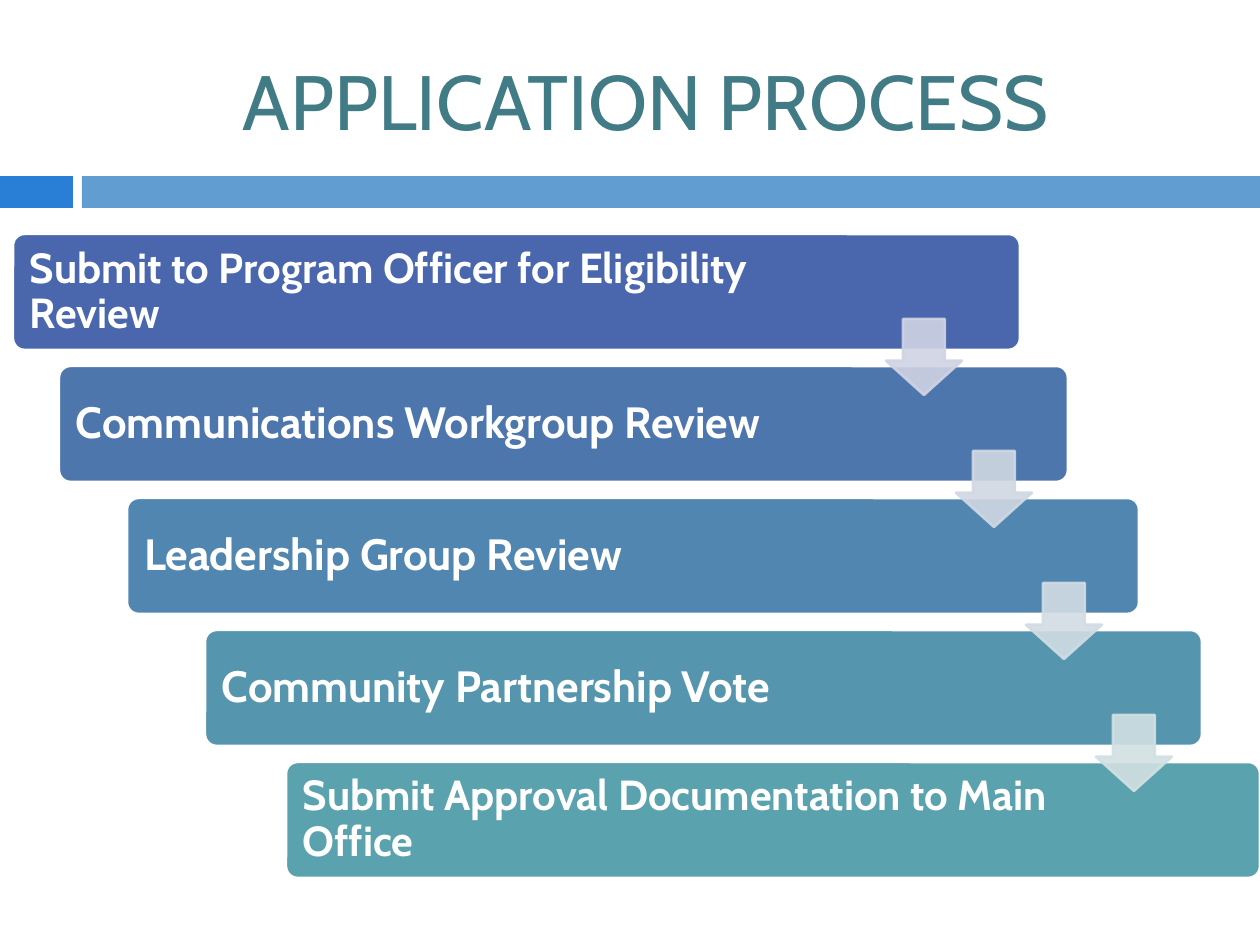
from lxml.etree import SubElement as Sub
from pptx import Presentation
from pptx.dml.color import RGBColor as RGB
from pptx.enum.shapes import MSO_SHAPE as Shape
from pptx.enum.text import MSO_ANCHOR as Anchor, PP_ALIGN as Align
from pptx.oxml.ns import qn
from pptx.util import Pt

SCALE = 914400 / 126
FONT = "Cabin"
COLORS = {
    "title": "417B85",
    "accent": "297FD5",
    "band": "629DD1",
    "white": "FFFFFF",
    "steps": ["4A66AC", "4D76AD", "5086AF", "5595AE", "5AA2AE"],
    "arrows": ["D0D3E3", "D0D8E3", "D1DCE3", "D2E0E3"],
}
STEPS = [
    ("Submit to Program Officer for Eligibility Review", 13, 1007, 858, 24),
    ("Communications Workgroup Review", 59, 1009, 845, 25),
    ("Leadership Group Review", 127, 1012, 848, 25),
    ("Community Partnership Vote", 205, 997, 835, 25),
    ("Submit Approval Documentation to Main Office", 286, 974, 816, 24),
]
PITCH = 132


def px(*nums):
    return [round(n * SCALE) for n in nums]


def draw(kind, box, fill, line=None):
    shape = slide.shapes.add_shape(kind, *px(*box))
    shape.shadow.inherit = False
    shape.fill.solid()
    shape.fill.fore_color.rgb = RGB.from_string(fill)
    if line:
        shape.line.color.rgb = RGB.from_string(line)
        shape.line.width = Pt(1.5)
    else:
        shape.line.fill.background()
    return shape


deck = Presentation()
deck.slide_width, deck.slide_height = px(1260, 945)
slide = deck.slides.add_slide(deck.slide_layouts[5])

draw(Shape.RECTANGLE, (0, 176, 73, 32), COLORS["accent"])
draw(Shape.RECTANGLE, (82, 176, 1178, 32), COLORS["band"])

title = slide.shapes.title
title.left, title.top, title.width, title.height = px(84, 32, 1124, 136)
title.text_frame.text = "APPLICATION PROCESS"
title.text_frame.vertical_anchor = Anchor.MIDDLE
para = title.text_frame.paragraphs[0]
para.alignment = Align.CENTER
para.font.name = FONT
para.font.size = Pt(44)
para.font.color.rgb = RGB.from_string(COLORS["title"])

for i, (text, left, width, span, size) in enumerate(STEPS):
    top = 234 + i * PITCH
    bar = draw(Shape.ROUNDED_RECTANGLE, (left, top, width, 116),
               COLORS["steps"][i], COLORS["white"])
    bar.adjustments[0] = 0.1
    label = slide.shapes.add_textbox(*px(left + 4, top + 3, span, 110))
    frame = label.text_frame
    frame.word_wrap = True
    frame.vertical_anchor = Anchor.MIDDLE
    (frame.margin_left, frame.margin_top,
     frame.margin_right, frame.margin_bottom) = px(13, 13, 13, 13)
    frame.text = text
    para = frame.paragraphs[0]
    para.line_spacing = 0.9
    para.font.name = FONT
    para.font.size = Pt(size)
    para.font.bold = True
    para.font.color.rgb = RGB.from_string(COLORS["white"])

for i, color in enumerate(COLORS["arrows"]):
    arrow = draw(Shape.DOWN_ARROW, (886 + i * 70, 319 + i * PITCH, 76, 76),
                 color, color)
    arrow.adjustments[0] = 0.55
    arrow.adjustments[1] = 0.45
    for node in arrow.element.spPr.iter(qn("a:srgbClr")):
        Sub(node, qn("a:alpha"), val="90000")

deck.save("out.pptx")
